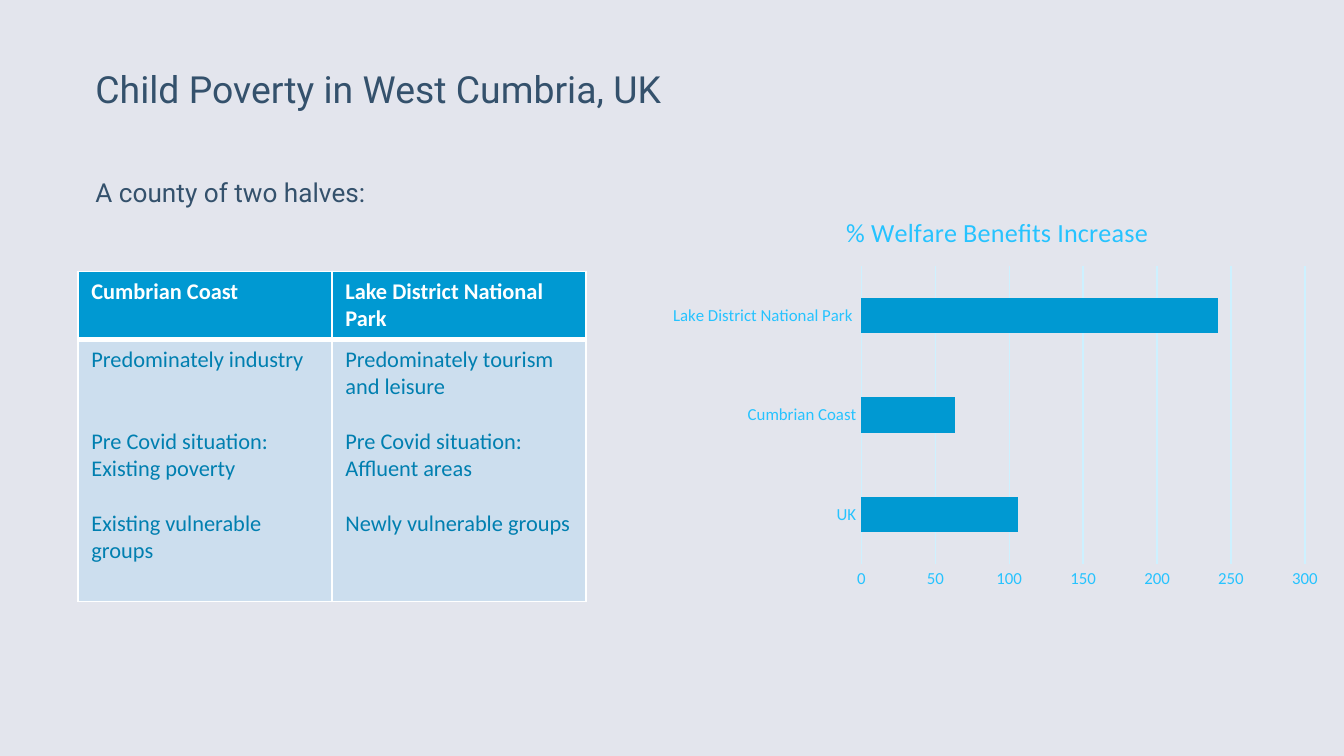
from lxml import etree
from pptx import Presentation
from pptx.chart.data import CategoryChartData
from pptx.dml.color import RGBColor
from pptx.enum.chart import XL_CHART_TYPE, XL_TICK_MARK
from pptx.enum.text import MSO_ANCHOR, MSO_AUTO_SIZE, PP_ALIGN
from pptx.oxml import parse_xml
from pptx.oxml.ns import nsdecls
from pptx.util import Inches, Pt

BAR = XL_CHART_TYPE.BAR_CLUSTERED
NO_TICK = XL_TICK_MARK.NONE
LEFT = PP_ALIGN.LEFT
TOP, BOTTOM = MSO_ANCHOR.TOP, MSO_ANCHOR.BOTTOM
NO_FIT = MSO_AUTO_SIZE.NONE

PAGE, NAVY, WHITE = "E3E5ED", "34516C", "FEFFFF"
BLUE, DEEP_BLUE, PALE_BLUE = "0099D2", "007FB0", "CCDEEE"
SKY, ICE = "26C3FF", "CDF1FF"

WIDTH = 10
HEIGHT = WIDTH * 9 / 16
MARGIN = 0.71
LINE = 14.65  # height in points of one line of table text
HEADERS = ["Cumbrian Coast", "Lake District National Park"]
# Each column lists (text, lines left free above it).
DETAILS = [
    [("Predominately industry", 0),
     ("Pre Covid situation: Existing poverty", 2),
     ("Existing vulnerable groups", 1)],
    [("Predominately tourism and leisure", 0),
     ("Pre Covid situation: Affluent areas", 1),
     ("Newly vulnerable groups", 1)],
]
BENEFITS = {"UK": 106, "Cumbrian Coast": 63, "Lake District National Park ": 241}


def rgb(value):
    return RGBColor.from_string(value)


def style_font(font, color, **values):
    for name, value in values.items():
        setattr(font, name, value)
    font.color.rgb = rgb(color)


def fill_text(shape, text, anchor, size):
    """Put one left-aligned heading in a shape without insets."""
    frame = shape.text_frame
    settings = dict(margin_left=0, margin_right=0, margin_top=0, margin_bottom=0,
                    word_wrap=True, auto_size=NO_FIT, vertical_anchor=anchor)
    for name, value in settings.items():
        setattr(frame, name, value)
    para = frame.paragraphs[0]
    para.alignment = LEFT
    span = para.add_run()
    span.text = text
    style_font(span.font, NAVY, name="Roboto", size=Pt(size))
    return para


def add_title(page, text):
    title = page.shapes.title
    title.left, title.top = Inches(MARGIN), Inches(0.13)
    title.width, title.height = Inches(6.98), Inches(0.7)
    fill_text(title, text, BOTTOM, 20).line_spacing = 0.9


def add_subtitle(page, text):
    box = page.shapes.add_textbox(Inches(MARGIN), Inches(1.31), Inches(3.92), Inches(1.39))
    fill_text(box, text, TOP, 14)


def set_borders(cell, **widths):
    """Draw white borders; widths are points by side (L, R, T, B)."""
    properties = cell._tc.get_or_add_tcPr()
    for side in "LRTB":
        width = Pt(widths.get(side, 1))
        properties.append(parse_xml(
            f'<a:ln{side} {nsdecls("a")} w="{width}"><a:solidFill>'
            f'<a:srgbClr val="{WHITE}"/></a:solidFill></a:ln{side}>'))


def fill_cell(cell, items, fill, color, bold, borders):
    set_borders(cell, **borders)
    cell.fill.solid()
    cell.fill.fore_color.rgb = rgb(fill)
    frame = cell.text_frame
    for index, (text, gap) in enumerate(items):
        para = frame.add_paragraph() if index else frame.paragraphs[0]
        if gap:
            para.space_before = Pt(gap * LINE)
        span = para.add_run()
        span.text = text
        style_font(span.font, color, name="Calibri", size=Pt(12), bold=bold)


def add_comparison(page):
    frame = page.shapes.add_table(2, 2, Inches(0.58), Inches(2.02), Inches(3.78), Inches(2.45))
    table = frame.table
    table.horz_banding = False
    for row, height in zip(table.rows, (0.5, 1.95)):
        row.height = Inches(height)
    for column, (header, details) in enumerate(zip(HEADERS, DETAILS)):
        table.columns[column].width = Inches(1.89)
        fill_cell(table.cell(0, column), [(header, 0)], BLUE, WHITE, True, {"B": 3})
        fill_cell(table.cell(1, column), details, PALE_BLUE, DEEP_BLUE, False, {"T": 3})


def place(element, **shares):
    """Fix a title or plot area at shares of the chart's size."""
    for old in element.findall("{*}layout"):
        element.remove(old)
    layout = parse_xml(f'<c:layout {nsdecls("c")}><c:manualLayout/></c:layout>')
    values = {"xMode": "edge", "yMode": "edge", **shares}
    if "w" in shares:
        values = {"layoutTarget": "inner", **values}
    space = etree.QName(layout).namespace
    for name, value in values.items():
        etree.SubElement(layout[0], f"{{{space}}}{name}").set("val", str(value))
    text = element.find("{*}tx")
    if text is None:
        element.insert(0, layout)
    else:
        text.addnext(layout)


def style_axis(axis):
    axis.major_tick_mark = axis.minor_tick_mark = NO_TICK
    style_font(axis.tick_labels.font, SKY, name="Calibri", size=Pt(9))


def style_line(line):
    line.color.rgb = rgb(ICE)
    line.width = Pt(0.75)


def add_benefits_chart(page):
    data = CategoryChartData()
    data.categories = list(BENEFITS)
    data.add_series("Series 1", list(BENEFITS.values()))
    chart = page.shapes.add_chart(BAR, Inches(4.91), Inches(1.44), Inches(5), Inches(3), data).chart
    style_font(chart.font, DEEP_BLUE, name="Calibri", size=Pt(10))
    chart.has_legend = False

    chart.has_title = True
    span = chart.chart_title.text_frame.paragraphs[0].add_run()
    span.text = "% Welfare Benefits Increase"
    style_font(span.font, SKY, name="Calibri", size=Pt(14), bold=False)
    chart.chart_title.include_in_layout = False
    place(chart.chart_title._element, x=0.27, y=0.04)

    plot = chart.plots[0]
    plot.gap_width = 182
    plot.vary_by_categories = False
    fill = plot.series[0].format.fill
    fill.solid()
    fill.fore_color.rgb = rgb(BLUE)
    place(chart._chartSpace.chart.plotArea, x=0.3, y=0.18, w=0.66, h=0.74)

    categories, values = chart.category_axis, chart.value_axis
    style_axis(categories)
    style_line(categories.format.line)
    style_axis(values)
    values.format.line.fill.background()
    values.minimum_scale, values.maximum_scale, values.major_unit = 0, 300, 50
    style_line(values.major_gridlines.format.line)


def main():
    deck = Presentation()
    deck.slide_width, deck.slide_height = Inches(WIDTH), Inches(HEIGHT)
    page = deck.slides.add_slide(deck.slide_layouts[5])
    page.background.fill.solid()
    page.background.fill.fore_color.rgb = rgb(PAGE)
    add_title(page, "Child Poverty in West Cumbria, UK")
    add_subtitle(page, "A county of two halves:")
    add_benefits_chart(page)
    add_comparison(page)
    deck.save("out.pptx")


if __name__ == "__main__":
    main()
